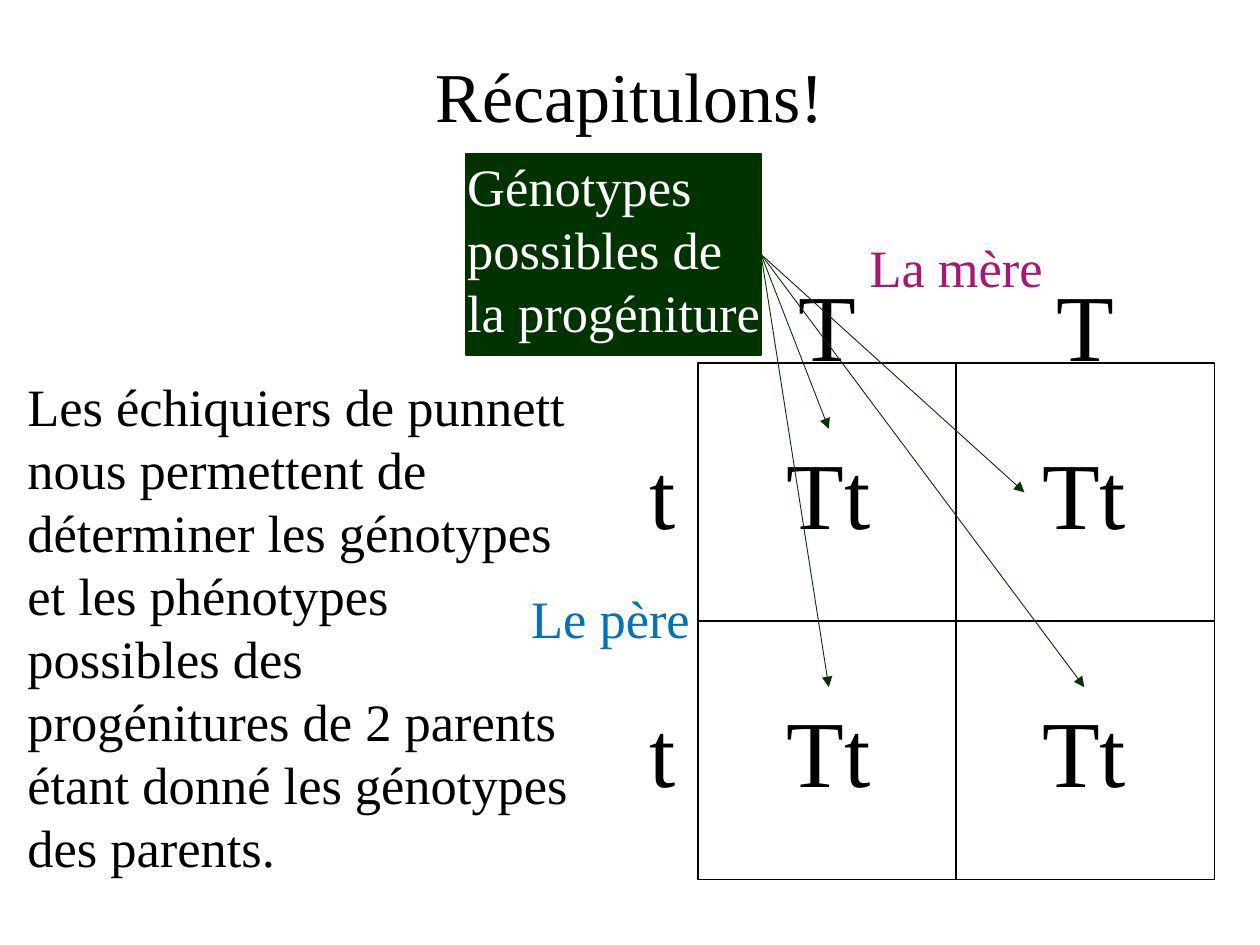
from lxml import etree
from pptx import Presentation
from pptx.dml.color import RGBColor
from pptx.enum.shapes import MSO_CONNECTOR, MSO_SHAPE
from pptx.enum.text import MSO_ANCHOR, MSO_AUTO_SIZE, PP_ALIGN
from pptx.oxml.ns import qn
from pptx.util import Pt

FONT = "Times New Roman"
BLACK = RGBColor(0x00, 0x00, 0x00)
WHITE = RGBColor(0xFF, 0xFF, 0xFF)
GREEN = RGBColor(0x00, 0x33, 0x00)
BLUE = RGBColor(0x00, 0x70, 0xC0)
PINK = RGBColor(0xAB, 0x15, 0x75)
TOP, LEFT, RIGHT = 0, 1, 3


def add_run(para, text, size, color):
    run = para.add_run()
    run.text = text
    run.font.name = FONT
    run.font.size = Pt(size)
    run.font.color.rgb = color


def add_text(slide, box, text, size, color, align=PP_ALIGN.CENTER):
    shape = slide.shapes.add_textbox(*map(Pt, box))
    frame = shape.text_frame
    frame.word_wrap = True
    frame.auto_size = MSO_AUTO_SIZE.SHAPE_TO_FIT_TEXT
    para = frame.paragraphs[0]
    para.alignment = align
    add_run(para, text, size, color)
    return shape


def add_rect(slide, box, fill, line):
    rect = slide.shapes.add_shape(MSO_SHAPE.RECTANGLE, *map(Pt, box))
    rect.shadow.inherit = False
    rect.fill.solid()
    rect.fill.fore_color.rgb = fill
    rect.line.color.rgb = line
    rect.line.width = Pt(1)
    return rect


def add_arrow(slide, start, end, side):
    line = slide.shapes.add_connector(MSO_CONNECTOR.STRAIGHT, 0, 0, 0, 0)
    line.begin_connect(start, RIGHT)
    line.end_connect(end, side)
    line.line.color.rgb = GREEN
    line.line.width = Pt(0.5)
    etree.SubElement(line.line._get_or_add_ln(), qn("a:tailEnd"), type="triangle")
    etree.SubElement(line._element.spPr, qn("a:effectLst"))


def add_title(slide, box, text):
    title = slide.shapes.title
    title.left, title.top, title.width, title.height = map(Pt, box)
    frame = title.text_frame
    frame.auto_size = MSO_AUTO_SIZE.NONE
    frame.vertical_anchor = MSO_ANCHOR.MIDDLE
    para = frame.paragraphs[0]
    para.alignment = PP_ALIGN.CENTER
    para.line_spacing = 0.9
    add_run(para, text, 40, BLACK)


def add_key(slide, box):
    """Green panel with the caption that the arrows start from."""
    x, y, w, h = box
    panel = add_rect(slide, box, GREEN, GREEN)
    add_text(slide, (x - 6.5, y - 3.6, w + 16.5, h + 1.5),
             "Génotypes possibles de la progéniture", 30, WHITE, PP_ALIGN.LEFT)
    return panel


def add_square(slide, box):
    """Punnett square; returns the genotype boxes row by row."""
    x, y, w, h = box
    cell = w / 2
    wide, high = 68.4, 72.7
    cols = [x + 40.5, x + 186.5]
    rows = [y + 37.6, y + 37.6 + cell]

    # Cells
    for top in (y, y + cell):
        for left in (x, x + cell):
            add_rect(slide, (left, top, cell, cell), WHITE, BLACK)

    # Alleles of each parent
    for left in (x, x + cell):
        add_text(slide, (left + (cell - wide) / 2, y - 58.3, wide, high),
                 "T", 54, BLACK)
    for top in rows:
        add_text(slide, (x - 54.7, top, wide, high), "t", 54, BLACK)

    # Parent names, centred on the square's sides
    add_text(slide, (x + cell - 80, y - 76.5, 160, 44), "La mère", 30, PINK)
    add_text(slide, (x - 103.5, y + cell - 23.8, 107, 44), "Le père", 30, BLUE)

    # Genotypes
    return [add_text(slide, (left, top, wide, high), "Tt", 54, BLACK)
            for top in rows for left in cols]


def main():
    deck = Presentation()
    deck.slide_width, deck.slide_height = Pt(720), Pt(540)
    slide = deck.slides.add_slide(deck.slide_layouts[5])

    add_title(slide, (0, 28.8, 720, 56.9), "Récapitulons!")
    panel = add_key(slide, (266.4, 87.8, 168.5, 115.2))
    pairs = add_square(slide, (398.9, 207.4, 295.2, 295.2))

    # Arrows from the caption to each genotype
    for pair, side in zip(pairs, (TOP, LEFT, TOP, TOP)):
        add_arrow(slide, panel, pair, side)

    # Explanation
    add_text(slide, (8.6, 210.2, 323.3, 298),
             "Les échiquiers de punnett nous permettent de déterminer les "
             "génotypes et les phénotypes possibles des progénitures de "
             "2 parents étant donné les génotypes des parents.",
             30, BLACK, PP_ALIGN.LEFT)
    deck.save("out.pptx")


if __name__ == "__main__":
    main()
